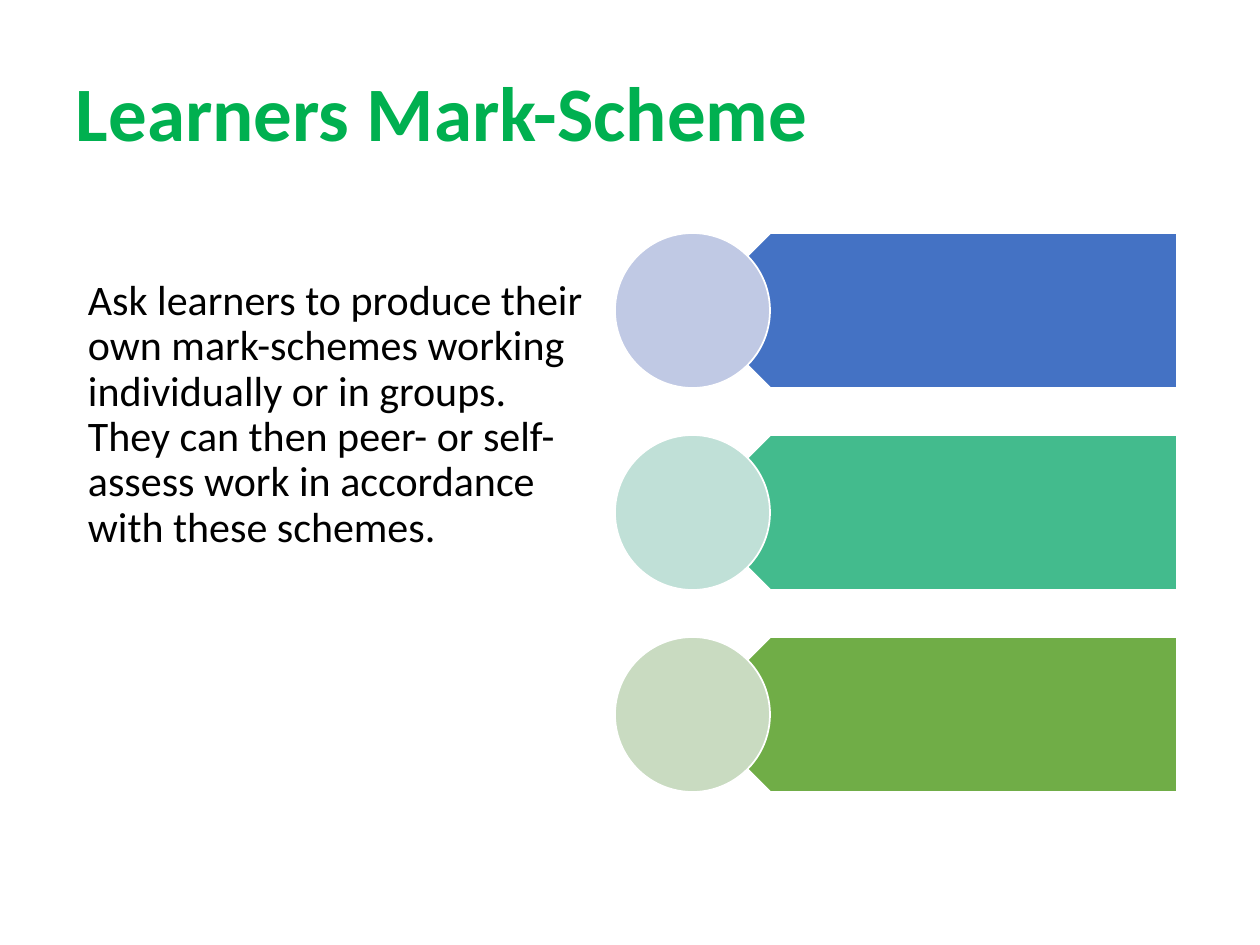
from dataclasses import dataclass

import pptx
import pptx.dml.color
import pptx.enum.shapes
import pptx.enum.text
import pptx.shapes.autoshape
import pptx.shapes.shapetree
import pptx.slide
import pptx.util

RGBColor = pptx.dml.color.RGBColor
Shape = pptx.enum.shapes.MSO_SHAPE
Anchor = pptx.enum.text.MSO_ANCHOR

EMU_PER_PX = 914400 // 126
FONT = "Calibri"

WHITE = RGBColor(0xFF, 0xFF, 0xFF)
BLACK = RGBColor(0x00, 0x00, 0x00)
TITLE_GREEN = RGBColor(0x00, 0xB0, 0x50)
BLUE = RGBColor(0x44, 0x72, 0xC4)
PALE_BLUE = RGBColor(0xC0, 0xC9, 0xE4)
TEAL = RGBColor(0x43, 0xBB, 0x8D)
PALE_TEAL = RGBColor(0xC0, 0xE0, 0xD7)
GREEN = RGBColor(0x70, 0xAD, 0x47)
PALE_GREEN = RGBColor(0xC9, 0xDB, 0xC1)

BANNER_TOP = 233
BANNER_PITCH = 202
BANNER_HEIGHT = 155
CIRCLE_LEFT = 615
BAR_LEFT = 693
BAR_WIDTH = 484


@dataclass(frozen=True)
class Area:
    left: int
    top: int
    width: int
    height: int

    def emu(self) -> tuple[int, int, int, int]:
        return px(self.left), px(self.top), px(self.width), px(self.height)


@dataclass(frozen=True)
class TextBlock:
    text: str
    area: Area
    size: int
    color: RGBColor
    bold: bool
    anchor: Anchor
    left_inset: int


@dataclass(frozen=True)
class Banner:
    bar_color: RGBColor
    circle_color: RGBColor


TEXT_BLOCKS = [
    TextBlock("Learners Mark-Scheme", Area(63, 38, 1134, 158),
              44, TITLE_GREEN, True, Anchor.MIDDLE, 13),
    TextBlock("Ask learners to produce their own mark-schemes working "
              "individually or in groups. They can then peer- or self-assess "
              "work in accordance with these schemes.",
              Area(44, 273, 557, 480), 24, BLACK, False, Anchor.TOP, 44),
]
BANNERS = [
    Banner(BLUE, PALE_BLUE),
    Banner(TEAL, PALE_TEAL),
    Banner(GREEN, PALE_GREEN),
]


def px(length: int) -> int:
    return pptx.util.Emu(length * EMU_PER_PX)


def add_text(page: pptx.slide.Slide, block: TextBlock) -> None:
    frame = page.shapes.add_textbox(*block.area.emu()).text_frame
    frame.word_wrap = True
    frame.vertical_anchor = block.anchor
    frame.margin_left = px(block.left_inset)
    para = frame.paragraphs[0]
    para.text = block.text
    para.line_spacing = 0.9
    para.font.name = FONT
    para.font.size = pptx.util.Pt(block.size)
    para.font.bold = block.bold
    para.font.color.rgb = block.color


def add_outlined(shapes: pptx.shapes.shapetree.GroupShapes, kind: Shape,
                 area: Area, color: RGBColor) -> pptx.shapes.autoshape.Shape:
    shape = shapes.add_shape(kind, *area.emu())
    shape.shadow.inherit = False
    shape.fill.solid()
    shape.fill.fore_color.rgb = color
    shape.line.color.rgb = WHITE
    shape.line.width = pptx.util.Pt(1)
    return shape


def add_banner(shapes: pptx.shapes.shapetree.GroupShapes, banner: Banner,
               top: int) -> None:
    bar = add_outlined(shapes, Shape.PENTAGON,
                       Area(BAR_LEFT, top, BAR_WIDTH, BANNER_HEIGHT),
                       banner.bar_color)
    bar.rotation = 180
    add_outlined(shapes, Shape.OVAL,
                 Area(CIRCLE_LEFT, top, BANNER_HEIGHT, BANNER_HEIGHT),
                 banner.circle_color)


def main() -> None:
    deck = pptx.Presentation()
    deck.slide_width = pptx.util.Inches(10)
    deck.slide_height = pptx.util.Inches(7.5)
    page = deck.slides.add_slide(deck.slide_layouts[6])
    for block in TEXT_BLOCKS:
        add_text(page, block)
    group = page.shapes.add_group_shape()
    for row, banner in enumerate(BANNERS):
        add_banner(group.shapes, banner, BANNER_TOP + row * BANNER_PITCH)
    deck.save("out.pptx")


if __name__ == "__main__":
    main()
